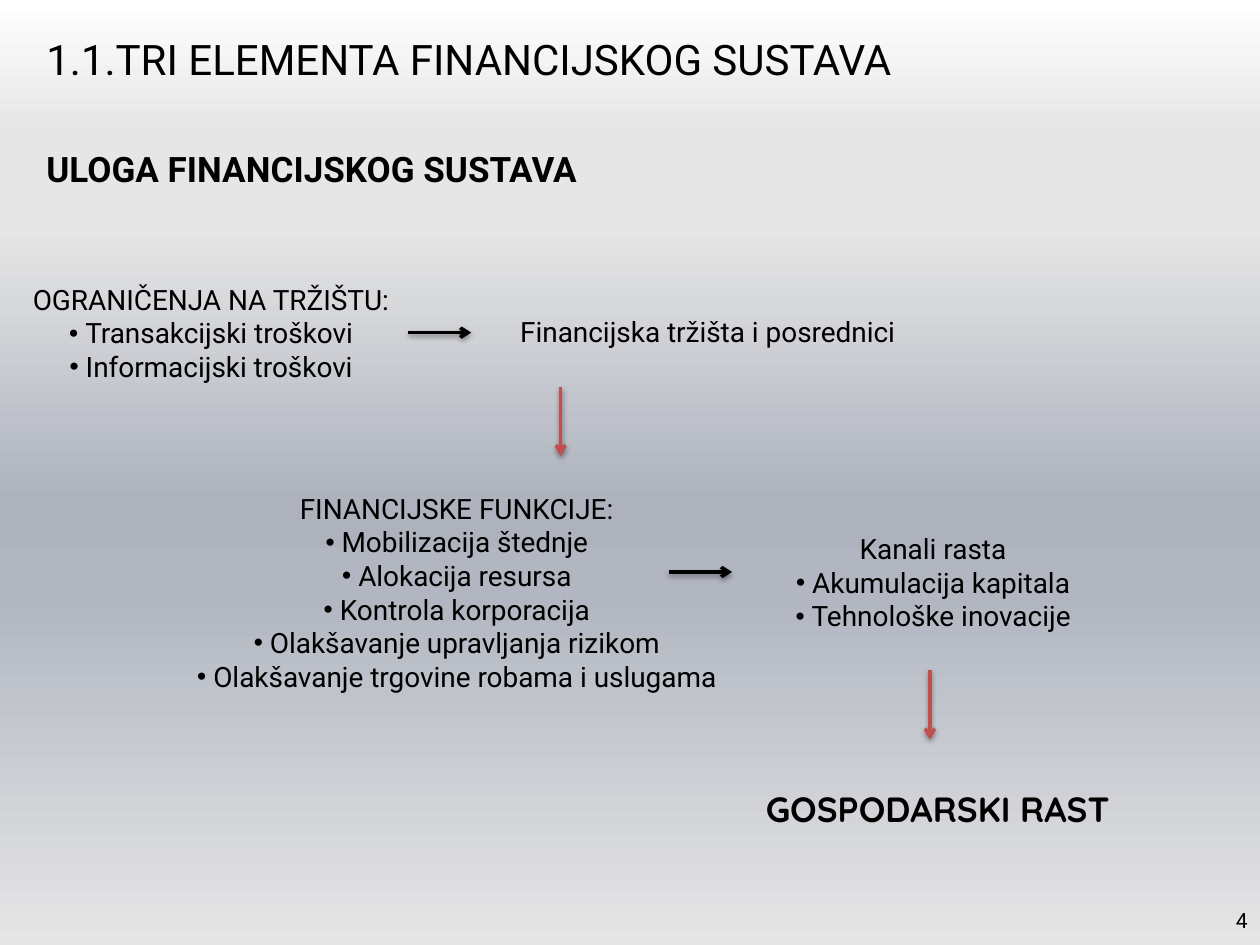
import pptx
import pptx.util
import pptx.dml.color
import pptx.enum.shapes
import pptx.enum.text
import pptx.oxml
import pptx.oxml.ns

Inches, Pt = pptx.util.Inches, pptx.util.Pt
RGB = pptx.dml.color.RGBColor.from_string
ALIGN = pptx.enum.text.PP_ALIGN
ANCHOR = pptx.enum.text.MSO_ANCHOR
NS = pptx.oxml.ns.nsdecls("a")

COLORS = {"text": "000000", "accent": "C0504D", "shadow": "000000"}
BACKGROUND = [(0, "FFFFFF"), (14, "E6E6E6"), (24, "E6E6E6"),
              (53, "ADB2BD"), (63, "B2B6C1"), (100, "E6E6E6")]
BODY = {"name": "Roboto", "size": Pt(16)}
TITLE = {"name": "Roboto", "size": Pt(24)}
HEADING = {"name": "Roboto", "size": Pt(20), "bold": True}
RESULT = {"name": "Quicksand", "size": Pt(20), "bold": True}
NUMBER = {"name": "Roboto", "size": Pt(12)}
BULLET_INDENT = Inches(0.13)


def element(xml):
    return pptx.oxml.parse_xml(xml)


def paint_background(s):
    fill = s.background.fill
    fill.gradient()
    fill.gradient_angle = 270
    stops = s.element.xpath(".//p:bg//a:gsLst")[0]
    for stop in list(stops):
        stops.remove(stop)
    for pos, color in BACKGROUND:
        stops.append(element(
            f'<a:gs {NS} pos="{pos * 1000}"><a:srgbClr val="{color}"/></a:gs>'))


def add_bullet(p):
    pPr = p._p.get_or_add_pPr()
    pPr.set("marL", str(BULLET_INDENT))
    pPr.set("indent", str(-BULLET_INDENT))
    pPr.append(element(f'<a:buFont {NS} typeface="Quicksand"/>'))
    pPr.append(element(f'<a:buChar {NS} char="•"/>'))


def add_text(s, box, lead, style, items=(), align=ALIGN.LEFT,
             anchor=ANCHOR.TOP, inset=0.06):
    """Place a lead line and, under it, bulleted items in the box."""
    sp = s.shapes.add_textbox(*map(Inches, box))
    tf = sp.text_frame
    tf.word_wrap = True
    tf.vertical_anchor = anchor
    tf.margin_top = Inches(inset)
    for i, text in enumerate((lead, *items)):
        p = tf.add_paragraph() if i else tf.paragraphs[0]
        p.alignment = align
        if i:
            add_bullet(p)
        r = p.add_run()
        r.text = text
        for name, value in style.items():
            setattr(r.font, name, value)
        r.font.color.rgb = RGB(COLORS["text"])


def add_arrow(s, x, y, dx, dy, color):
    line = s.shapes.add_connector(
        pptx.enum.shapes.MSO_CONNECTOR.STRAIGHT,
        *map(Inches, (x, y, x + dx, y + dy)))
    line.line.width = Pt(2)
    line.line.color.rgb = RGB(COLORS[color])
    line.line._get_or_add_ln().append(element(f'<a:tailEnd {NS} type="arrow"/>'))
    line._element.spPr.append(element(
        f'<a:effectLst {NS}><a:outerShdw blurRad="{Pt(3.1)}" dist="{Pt(1.6)}" '
        f'dir="5400000" rotWithShape="0"><a:srgbClr val="{COLORS["shadow"]}">'
        '<a:alpha val="38000"/></a:srgbClr></a:outerShdw></a:effectLst>'))


def add_headings(s):
    add_text(s, (0.27, 0.21, 9.46, 0.91), "1.1.TRI ELEMENTA FINANCIJSKOG SUSTAVA", TITLE)
    add_text(s, (0.27, 1.11, 4.73, 0.98), "ULOGA FINANCIJSKOG SUSTAVA", HEADING)
    add_text(s, (9.48, 7.1, 0.52, 0.4), "4", NUMBER,
             align=ALIGN.RIGHT, anchor=ANCHOR.MIDDLE, inset=0.05)


def add_flow(s):
    """Market limits lead to markets, functions, growth channels and growth."""
    add_text(s, (0, 2.14, 3.35, 1.85), "OGRANIČENJA NA TRŽIŠTU:", BODY,
             ("Transakcijski troškovi", "Informacijski troškovi"),
             align=ALIGN.CENTER, inset=0.1)
    add_text(s, (4.03, 2.44, 3.35, 1.24), "Financijska tržišta i posrednici", BODY)
    add_text(s, (1.38, 3.8, 4.49, 2.66), "FINANCIJSKE FUNKCIJE:", BODY,
             ("Mobilizacija štednje", "Alokacija resursa", "Kontrola korporacija",
              "Olakšavanje upravljanja rizikom",
              "Olakšavanje trgovine robama i uslugama"),
             align=ALIGN.CENTER, inset=0.1)
    add_text(s, (5.73, 4.15, 3.35, 1.45), "Kanali rasta", BODY,
             ("Akumulacija kapitala", "Tehnološke inovacije"),
             align=ALIGN.CENTER, inset=0.07)
    add_text(s, (5.98, 6.19, 3.75, 0.98), "GOSPODARSKI RAST", RESULT)
    for x, y in ((3.24, 2.64), (5.31, 4.54)):
        add_arrow(s, x, y, 0.5, 0, "text")
    for x, y in ((4.45, 3.07), (7.38, 5.32)):
        add_arrow(s, x, y, 0, 0.55, "accent")


def main():
    prs = pptx.Presentation()
    prs.slide_width, prs.slide_height = Inches(10), Inches(7.5)
    s = prs.slides.add_slide(prs.slide_layouts[6])
    paint_background(s)
    add_headings(s)
    add_flow(s)
    prs.save("out.pptx")


if __name__ == "__main__":
    main()
